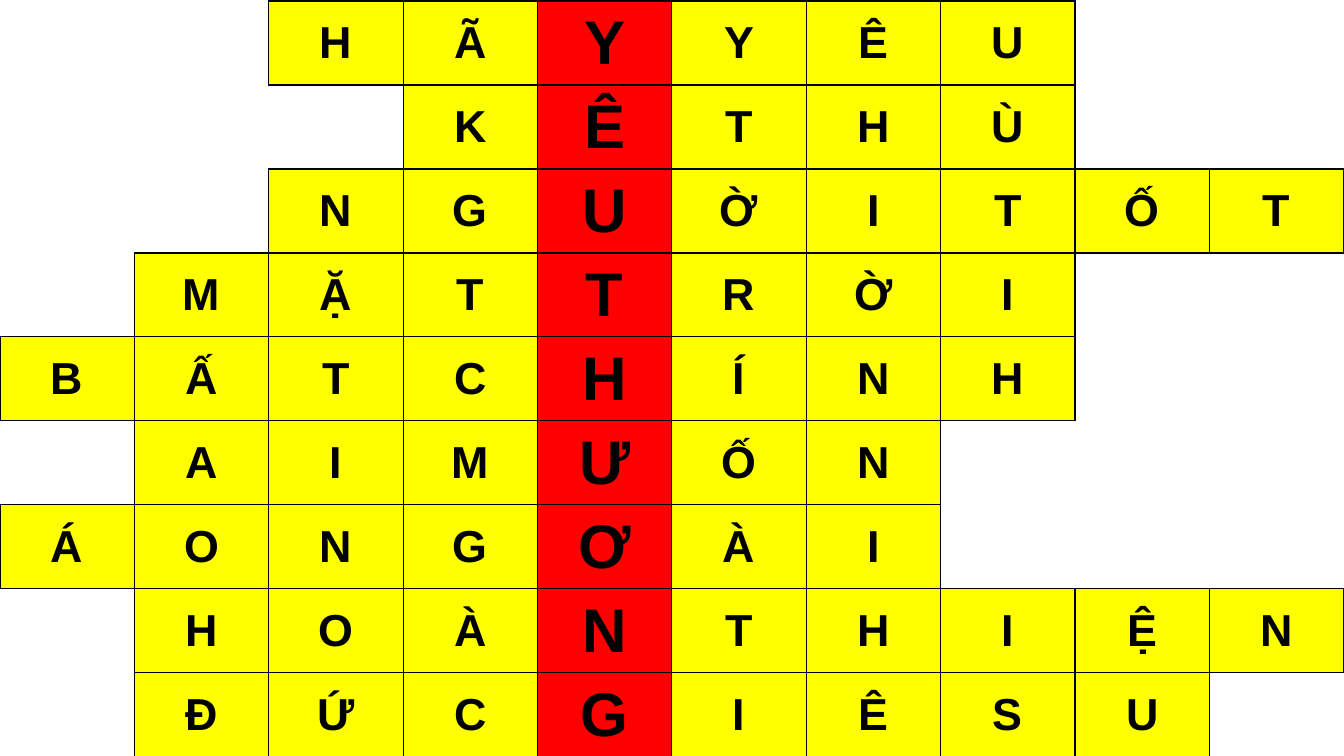
from dataclasses import dataclass

from lxml.etree import SubElement
from pptx import Presentation
from pptx.dml.color import RGBColor
from pptx.enum.text import MSO_ANCHOR, PP_ALIGN
from pptx.oxml.ns import qn
from pptx.util import Inches, Pt


@dataclass(frozen=True)
class Theme:
    font: str = "Arial"
    letter_size: int = 32
    key_size: int = 44
    border_width: int = 1
    ink: str = "000000"
    paper: str = "FFFFFF"
    answer: str = "FFFF00"
    key: str = "FF0000"


THEME = Theme()
COLUMNS = 10
KEY_COLUMN = 4

# Starting column and letters of each answer
ANSWERS = [
    (2, "HÃYYÊU"),
    (3, "KÊTHÙ"),
    (2, "NGUỜITỐT"),
    (1, "MẶTTRỜI"),
    (0, "BẤTCHÍNH"),
    (1, "AIMƯỐN"),
    (0, "ÁONGƠÀI"),
    (1, "HOÀNTHIỆN"),
    (1, "ĐỨCGIÊSU"),
]


def write_letter(cell, text, *, size, color):
    cell.vertical_anchor = MSO_ANCHOR.MIDDLE
    paragraph = cell.text_frame.paragraphs[0]
    paragraph.alignment = PP_ALIGN.CENTER
    run = paragraph.add_run()
    run.text = text
    run.font.name = THEME.font
    run.font.size = Pt(size)
    run.font.bold = True
    run.font.color.rgb = RGBColor.from_string(color)


def set_borders(cell, visible_sides):
    """Draw the sides named in visible_sides (of L, R, T, B) and hide the rest."""
    properties = cell._tc.get_or_add_tcPr()
    for position, side in enumerate("LRTB"):
        line = SubElement(properties, qn(f"a:ln{side}"), w=str(Pt(THEME.border_width)))
        if side in visible_sides:
            fill = SubElement(line, qn("a:solidFill"))
            SubElement(fill, qn("a:srgbClr"), val=THEME.ink)
        else:
            SubElement(line, qn("a:noFill"))
        properties.insert(position, line)


prs = Presentation()
prs.slide_width, prs.slide_height = Inches(13.333), Inches(7.5)
slide = prs.slides.add_slide(prs.slide_layouts[6])

crossword = slide.shapes.add_table(
    len(ANSWERS), COLUMNS, Inches(0), Inches(0.01), prs.slide_width, prs.slide_height
).table
crossword.first_row = False
crossword.horz_banding = False

letters = {
    (row, start + offset): letter
    for row, (start, answer) in enumerate(ANSWERS)
    for offset, letter in enumerate(answer)
}

for row in range(len(ANSWERS)):
    for column in range(COLUMNS):
        cell = crossword.cell(row, column)
        letter = letters.get((row, column))
        is_key = column == KEY_COLUMN
        background = THEME.paper
        if letter:
            background = THEME.key if is_key else THEME.answer
            size = THEME.key_size if is_key else THEME.letter_size
            write_letter(cell, letter, size=size, color=THEME.ink)
        cell.fill.solid()
        cell.fill.fore_color.rgb = RGBColor.from_string(background)

        # A side is drawn when a letter lies on either side of it
        neighbours = {
            "L": (row, column - 1),
            "R": (row, column + 1),
            "T": (row - 1, column),
            "B": (row + 1, column),
        }
        set_borders(cell, [s for s, place in neighbours.items() if letter or place in letters])

prs.save("out.pptx")
